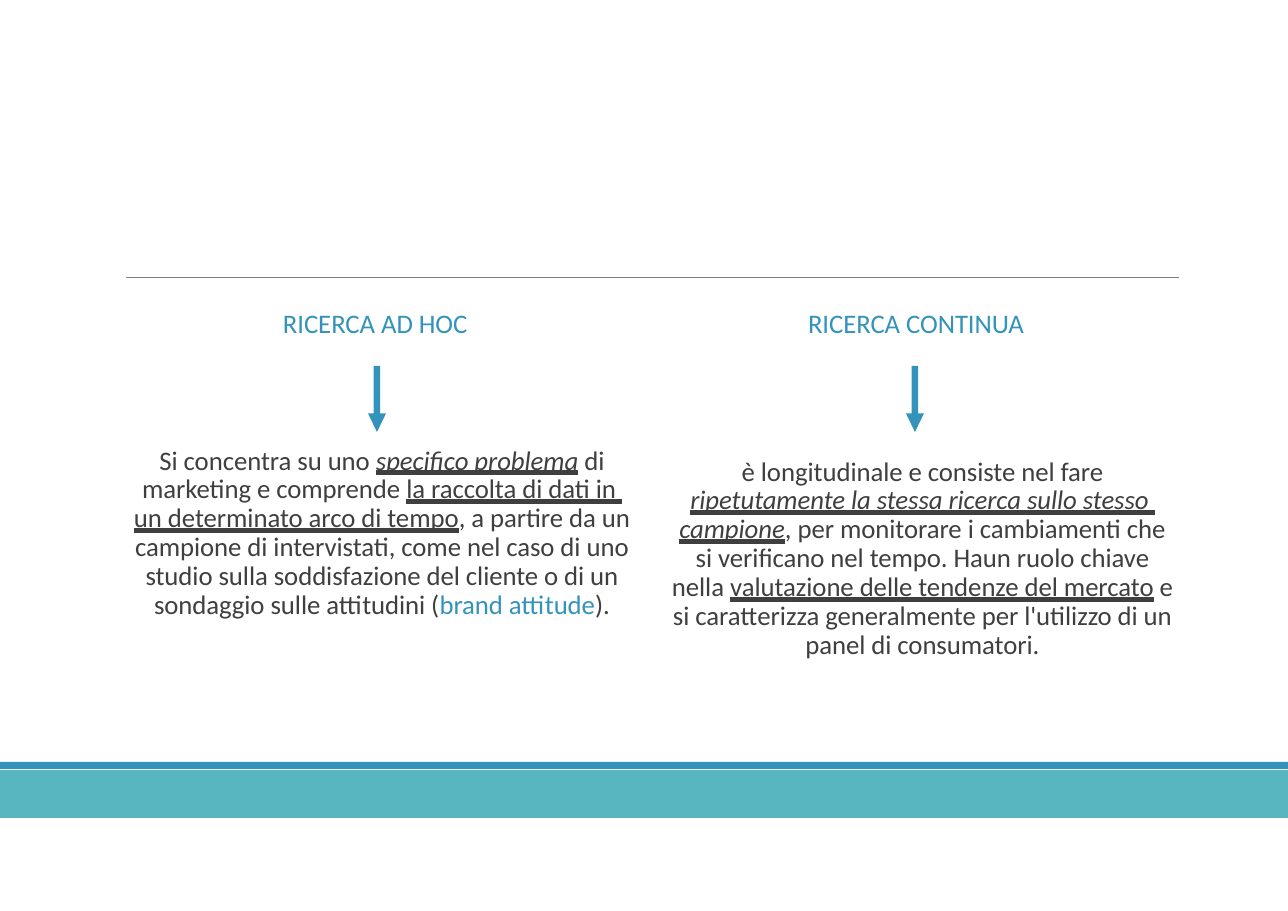
import pptx
import pptx.dml.color
import pptx.enum.shapes
import pptx.enum.text
import pptx.oxml.ns
import pptx.util
from lxml import etree

SHAPE = pptx.enum.shapes.MSO_SHAPE
ALIGN = pptx.enum.text.PP_ALIGN
qn = pptx.oxml.ns.qn

BLUE = pptx.dml.color.RGBColor(0x34, 0x93, 0xBA)
TEAL = pptx.dml.color.RGBColor(0x57, 0xB6, 0xBF)
GRAY = pptx.dml.color.RGBColor(0x7E, 0x7E, 0x7E)
DARK = pptx.dml.color.RGBColor(0x3F, 0x3F, 0x3F)

PX = 914400 / 110.2  # EMU in one px

# Run styles
PLAIN = {}
UNDER = {"underline": True}
STRESS = {"underline": True, "italic": True}
TERM = {"color": BLUE}


def emu(*lengths):
    return [pptx.util.Emu(round(length * PX)) for length in lengths]


class SlideBuilder:
    font = "Calibri"
    size = 17.5
    tracking = -0.07

    def __init__(self, slide):
        self.slide = slide

    def shape(self, kind, box, color):
        shape = self.slide.shapes.add_shape(kind, *emu(*box))
        shape.shadow.inherit = False
        shape.fill.solid()
        shape.fill.fore_color.rgb = color
        shape.line.fill.background()
        return shape

    def arrow(self, left, top, width, height):
        arrow = self.shape(SHAPE.DOWN_ARROW, (left, top, width, height), BLUE)
        arrow.adjustments[0] = 0.36
        arrow.adjustments[1] = 1.03

    def rule(self, left, right, y):
        rule = self.slide.shapes.add_connector(
            pptx.enum.shapes.MSO_CONNECTOR.STRAIGHT, *emu(left, y, right, y))
        rule.line.color.rgb = GRAY
        rule.line.width = pptx.util.Pt(0.48)
        etree.SubElement(rule._element.spPr, qn("a:effectLst"))

    def run(self, paragraph, text, color, underline=False, italic=False):
        run = paragraph.add_run()
        run.text = text
        run.font.name = self.font
        run.font.size = pptx.util.Pt(self.size)
        run.font.color.rgb = color
        run.font.italic = italic
        if underline:
            run.font.underline = pptx.enum.text.MSO_UNDERLINE.HEAVY_LINE
        run.font._element.set("spc", str(round(self.tracking * 100)))

    def text(self, box, lines, color, align=ALIGN.LEFT, spacing=1.0, inset=1):
        frame = self.slide.shapes.add_textbox(*emu(*box)).text_frame
        frame.word_wrap = True
        frame.margin_left = frame.margin_right = frame.margin_bottom = 0
        frame.margin_top = emu(inset)[0]
        paragraph = frame.paragraphs[0]
        paragraph.alignment = align
        paragraph.line_spacing = spacing
        for number, line in enumerate(lines):
            if number:
                paragraph.add_line_break()
                etree.SubElement(paragraph._p[-1], qn("a:rPr"),
                                 sz=str(round(self.size * 100)))
            for words, style in line:
                self.run(paragraph, words, **{"color": color, **style})


AD_HOC = [
    [("Si concentra su uno ", PLAIN), ("specifico problema", STRESS), (" di", PLAIN)],
    [("marketing e comprende ", PLAIN), ("la raccolta di dati in ", UNDER)],
    [("un determinato arco di tempo", UNDER), (", a partire da un", PLAIN)],
    [("campione di intervistati, come nel caso di uno", PLAIN)],
    [("studio sulla soddisfazione del cliente o di un", PLAIN)],
    [("sondaggio sulle attitudini (", PLAIN), ("brand attitude", TERM), (").", PLAIN)],
]
CONTINUA = [
    [("è longitudinale e consiste nel fare", PLAIN)],
    [("ripetutamente la stessa ricerca sullo stesso ", STRESS)],
    [("campione", STRESS), (", per monitorare i cambiamenti che", PLAIN)],
    [("si verificano nel tempo. Haun ruolo chiave", PLAIN)],
    [("nella ", PLAIN), ("valutazione delle tendenze del mercato", UNDER), (" e", PLAIN)],
    [("si caratterizza generalmente per l'utilizzo di un", PLAIN)],
    [("panel di consumatori.", PLAIN)],
]

# Heading, its left and width, arrow left, description box, description
COLUMNS = [
    ("RICERCA AD HOC", 283, 200, 368, (130, 443, 504, 181), AD_HOC),
    ("RICERCA CONTINUA", 808, 230, 906, (668, 454, 509, 209), CONTINUA),
]


def main():
    deck = pptx.Presentation()
    deck.slide_width, deck.slide_height = emu(1288, 911)
    builder = SlideBuilder(deck.slides.add_slide(deck.slide_layouts[6]))

    # Footer bands and title rule
    builder.shape(SHAPE.RECTANGLE, (0, 770, 1288, 48), TEAL)
    builder.shape(SHAPE.RECTANGLE, (0, 762, 1288, 7), BLUE)
    builder.rule(126, 1179, 277)

    # The two kinds of research
    for heading, left, width, arrow_left, box, description in COLUMNS:
        builder.text((left, 306, width, 35), [[(heading, PLAIN)]], BLUE)
        builder.arrow(arrow_left, 366, 18, 66)
        builder.text(box, description, DARK, ALIGN.CENTER, 0.9, 4)

    deck.save("out.pptx")


if __name__ == "__main__":
    main()
